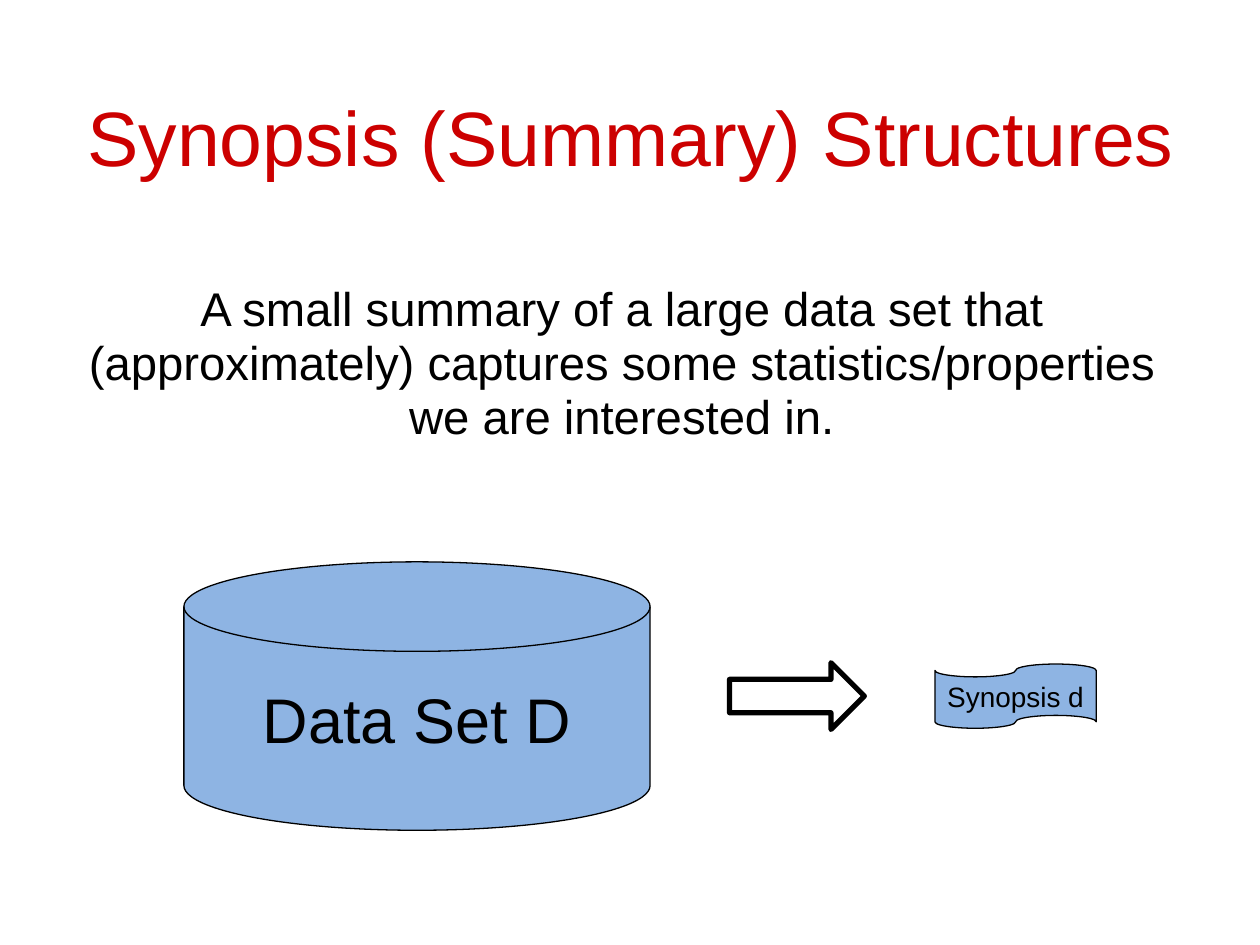
"""Build a slide that shows a large data set condensed into a small synopsis."""
from pptx import Presentation
from pptx.dml.color import RGBColor
from pptx.enum.shapes import MSO_SHAPE
from pptx.enum.text import MSO_ANCHOR, PP_ALIGN
from pptx.util import Inches, Pt

DISK = MSO_SHAPE.FLOWCHART_MAGNETIC_DISK
TAPE = MSO_SHAPE.FLOWCHART_PUNCHED_TAPE
ARROW = MSO_SHAPE.RIGHT_ARROW
CENTER = PP_ALIGN.CENTER
TOP, MIDDLE, BOTTOM = MSO_ANCHOR.TOP, MSO_ANCHOR.MIDDLE, MSO_ANCHOR.BOTTOM

RED = RGBColor(0xCC, 0x00, 0x00)
BLACK = RGBColor(0x00, 0x00, 0x00)
WHITE = RGBColor(0xFF, 0xFF, 0xFF)
BLUE = RGBColor(0x8E, 0xB4, 0xE3)

TITLE = "Synopsis (Summary) Structures"
TITLE_BOX = (0.68, 0.76, 8.66, 0.7)
DEFINITION = (
    "A small summary of a large data set that (approximately) captures "
    "some statistics/properties we are interested in."
)
DEFINITION_BOX = (0.69, 2.25, 8.49, 1.3)
DIAGRAM = [
    {"kind": DISK, "box": (1.46, 4.46, 3.7, 2.13), "fill": BLUE, "line": 0.75,
     "text": "Data Set D", "size": 36},
    {"kind": TAPE, "box": (7.42, 5.27, 1.28, 0.51), "fill": BLUE, "line": 0.75,
     "text": "Synopsis d", "size": 16},
    {"kind": ARROW, "box": (5.79, 5.26, 1.07, 0.53), "fill": WHITE, "line": 3},
]
NO_MARGINS = dict.fromkeys(
    ("margin_left", "margin_top", "margin_right", "margin_bottom"), 0
)


def set_attributes(target, values):
    """Set each named attribute of the target."""
    for name, value in values.items():
        setattr(target, name, value)


def write_text(shape, text, size, color, frame_format, line_spacing=1.0):
    """Write one centred Arial paragraph into the shape."""
    frame = shape.text_frame
    frame.text = text
    set_attributes(frame, frame_format)
    paragraph = frame.paragraphs[0]
    set_attributes(paragraph, {"alignment": CENTER, "line_spacing": line_spacing})
    font = paragraph.runs[0].font
    set_attributes(font, {"name": "Arial", "size": Pt(size)})
    font.color.rgb = color


def add_diagram_shape(slide, item):
    """Add one filled and outlined shape with its label, if it has one."""
    shape = slide.shapes.add_shape(item["kind"], *map(Inches, item["box"]))
    shape.shadow.inherit = False
    shape.fill.solid()
    shape.fill.fore_color.rgb = item["fill"]
    shape.line.color.rgb = BLACK
    shape.line.width = Pt(item["line"])
    if "text" in item:
        frame_format = {"vertical_anchor": MIDDLE, "word_wrap": False}
        write_text(shape, item["text"], item["size"], BLACK, frame_format)


def main():
    """Create the presentation and save it."""
    presentation = Presentation()
    set_attributes(
        presentation, {"slide_width": Inches(10), "slide_height": Inches(7.5)}
    )
    slide = presentation.slides.add_slide(presentation.slide_layouts[5])

    title = slide.shapes.title
    left, top, width, height = map(Inches, TITLE_BOX)
    set_attributes(
        title, {"left": left, "top": top, "width": width, "height": height}
    )
    title_format = {**NO_MARGINS, "vertical_anchor": BOTTOM, "word_wrap": True}
    write_text(title, TITLE, 44, RED, title_format, 0.95)

    definition = slide.shapes.add_textbox(*map(Inches, DEFINITION_BOX))
    definition_format = {**NO_MARGINS, "vertical_anchor": TOP, "word_wrap": True}
    write_text(definition, DEFINITION, 27, BLACK, definition_format, 0.95)

    for item in DIAGRAM:
        add_diagram_shape(slide, item)

    presentation.save("out.pptx")


if __name__ == "__main__":
    main()
